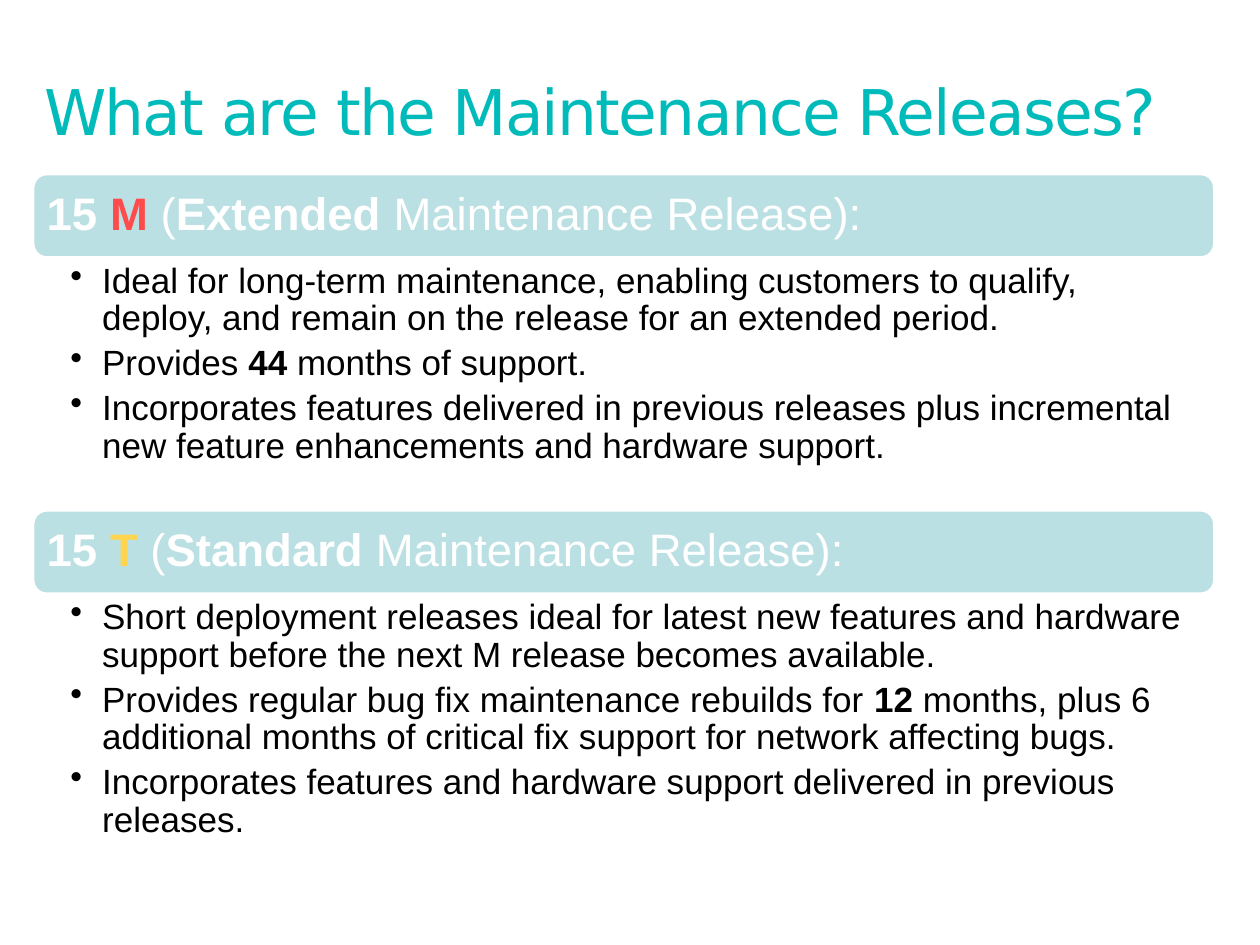
from pptx import Presentation
from pptx.dml.color import RGBColor
from pptx.enum import shapes, text
from pptx.oxml import parse_xml
from pptx.oxml.ns import nsdecls
from pptx.util import Cm, Pt

HUES = {"title": "01BBBB", "bar": "BBE0E3", "white": "FFFFFF",
        "ink": "000000", "red": "FF4B4B", "gold": "FFD54F"}

# Each section: letter, its colour, kind of release, bullets (*bold* parts)
PARTS = [
    ("M", "red", "Extended", [
        "Ideal for long-term maintenance, enabling customers to qualify, "
        "deploy, and remain on the release for an extended period.",
        "Provides *44* months of support.",
        "Incorporates features delivered in previous releases plus "
        "incremental new feature enhancements and hardware support."]),
    ("T", "gold", "Standard", [
        "Short deployment releases ideal for latest new features and "
        "hardware support before the next M release becomes available.",
        "Provides regular bug fix maintenance rebuilds for *12* months, plus "
        "6 additional months of critical fix support for network affecting "
        "bugs.",
        "Incorporates features and hardware support delivered in previous "
        "releases."]),
]


def hue(key):
    return RGBColor.from_string(HUES[key])


def assign(item, **values):
    for name, value in values.items():
        setattr(item, name, value)


def add_run(para, words, size, key, bold=False, face="Arial"):
    run = para.add_run()
    run.text = words
    assign(run.font, name=face, size=Pt(size), bold=bold)
    run.font.color.rgb = hue(key)
    return run


def set_frame(frame, anchor, left, top, right, bottom):
    assign(frame, word_wrap=True, vertical_anchor=anchor,
           auto_size=text.MSO_AUTO_SIZE.NONE,
           margin_left=Cm(left), margin_top=Cm(top),
           margin_right=Cm(right), margin_bottom=Cm(bottom))


def add_title(slide, x, y, w, h):
    title = slide.shapes.title
    assign(title, left=Cm(x), top=Cm(y), width=Cm(w), height=Cm(h))
    set_frame(title.text_frame, text.MSO_ANCHOR.MIDDLE, 0.25, 0.13, 0.25, 0.13)
    para = title.text_frame.paragraphs[0]
    assign(para, alignment=text.PP_ALIGN.LEFT, line_spacing=0.8)
    run = add_run(para, "What are the Maintenance Releases?", 36, "title",
                  face="DejaVu Sans")
    run.font._element.set("spc", "-100")


def add_bar(slide, x, y, w, h, letter, tint, kind):
    bar = slide.shapes.add_shape(shapes.MSO_SHAPE.ROUNDED_RECTANGLE,
                                 Cm(x), Cm(y), Cm(w), Cm(h))
    bar.shadow.inherit = False
    bar.fill.solid()
    bar.fill.fore_color.rgb = hue("bar")
    bar.line.color.rgb = hue("white")
    bar.line.width = Pt(2)
    set_frame(bar.text_frame, text.MSO_ANCHOR.MIDDLE, 0.2, 0.2, 0.2, 0.2)
    para = bar.text_frame.paragraphs[0]
    assign(para, alignment=text.PP_ALIGN.LEFT, line_spacing=0.9)
    for words, key, bold in [("15 ", "white", True), (letter, tint, True),
                             (" (", "white", False), (kind, "white", True),
                             (" Maintenance Release):", "white", False)]:
        add_run(para, words, 26, key, bold)


def add_list(slide, x, y, w, h, items):
    frame = slide.shapes.add_textbox(Cm(x), Cm(y), Cm(w), Cm(h)).text_frame
    set_frame(frame, text.MSO_ANCHOR.TOP, 0.76, 0.1, 0.5, 0.1)
    for i, item in enumerate(items):
        para = frame.add_paragraph() if i else frame.paragraphs[0]
        assign(para, level=1, line_spacing=0.9, space_after=Pt(4))
        props = para._p.get_or_add_pPr()
        props.set("marL", str(Cm(0.64)))
        props.set("indent", str(-Cm(0.64)))
        props.append(parse_xml(f'<a:buChar {nsdecls("a")} char="•"/>'))
        for j, words in enumerate(item.split("*")):
            add_run(para, words, 20, "ink", bold=j % 2 == 1)


def add_part(slide, x, y, w, h, letter, tint, kind, items):
    bar = 1.7
    add_bar(slide, x, y, w, bar, letter, tint, kind)
    add_list(slide, x, y + bar, w, h - bar, items)


def main():
    deck = Presentation()
    assign(deck, slide_width=Cm(25.4), slide_height=Cm(19.05))
    slide = deck.slides.add_slide(deck.slide_layouts[5])
    add_title(slide, 0.64, 1.19, 23.85, 2.34)
    # Two sections, stacked
    step = 6.78
    for i, part in enumerate(PARTS):
        add_part(slide, 0.66, 3.5 + i * step, 23.83, step, *part)
    deck.save("out.pptx")


if __name__ == "__main__":
    main()
